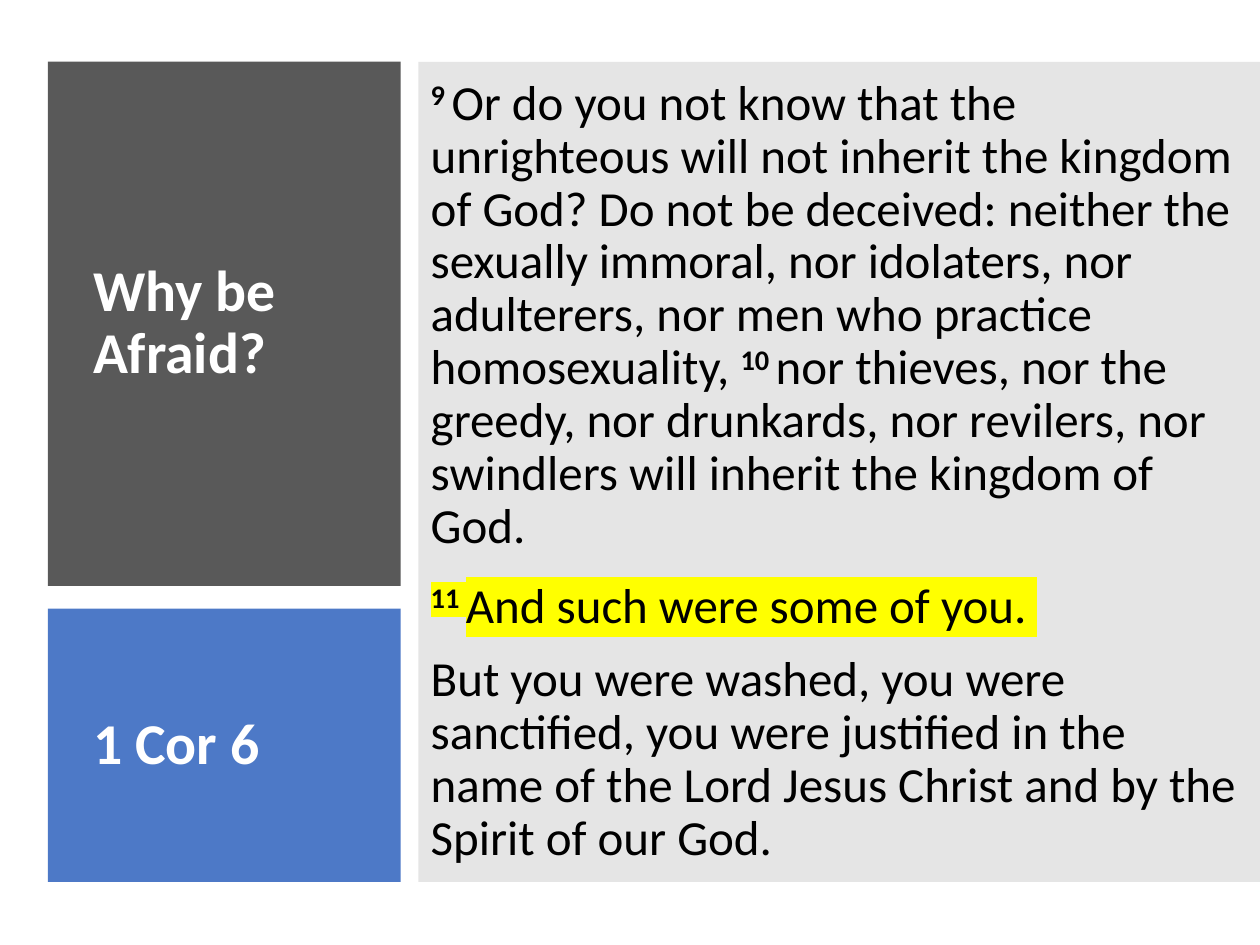
from lxml import etree
from pptx import Presentation
from pptx.dml.color import RGBColor
from pptx.enum.shapes import MSO_SHAPE
from pptx.enum.text import MSO_ANCHOR, PP_ALIGN
from pptx.oxml.ns import qn
from pptx.util import Inches, Pt

FONT = "Calibri"
WHITE, BLACK, YELLOW = "FFFFFF", "000000", "FFFF00"
DARK, BLUE, PALE = "595959", "4472C4", "E5E5E5"

# Each verse: space after in points, highlight, then (text, is verse number) spans
VERSES = [
    (15.4, None, [
        ("9 ", True),
        ("Or do you not know that the unrighteous will not inherit the kingdom of God? "
         "Do not be deceived: neither the sexually immoral, nor idolaters, nor adulterers, "
         "nor men who practice homosexuality, ", False),
        ("10 ", True),
        ("nor thieves, nor the greedy, nor drunkards, nor revilers, nor swindlers "
         "will inherit the kingdom of God. ", False),
    ]),
    (11.5, YELLOW, [("11 ", True), ("And such were some of you. ", False)]),
    (0, None, [
        ("But you were washed, you were sanctified, you were justified in the name "
         "of the Lord Jesus Christ and by the Spirit of our God.", False),
    ]),
]


def color(hex_string):
    return RGBColor.from_string(hex_string)


class SlideBuilder:
    def __init__(self, page):
        self.page = page

    def panel(self, left, top, width, height, fill, opacity=100):
        box = self.page.shapes.add_shape(
            MSO_SHAPE.RECTANGLE, Inches(left), Inches(top), Inches(width), Inches(height))
        box.shadow.inherit = False
        box.line.fill.background()
        box.fill.solid()
        box.fill.fore_color.rgb = color(fill)
        if opacity < 100:
            tint = box.fill._xPr.find(qn("a:solidFill"))[0]
            etree.SubElement(tint, qn("a:alpha"), val=str(opacity * 1000))
        return box

    def style(self, span, size, ink, bold):
        span.font.name = FONT
        span.font.size = Pt(size)
        span.font.bold = bold
        span.font.color.rgb = color(ink)

    def heading(self, left, top, width, height, text):
        box = self.page.shapes.add_textbox(
            Inches(left), Inches(top), Inches(width), Inches(height))
        frame = box.text_frame
        frame.word_wrap = True
        frame.vertical_anchor = MSO_ANCHOR.MIDDLE
        frame.text = text
        para = frame.paragraphs[0]
        para.line_spacing = 0.9
        para.space_after = Pt(6)
        self.style(para.runs[0], 33, WHITE, True)

    def highlight(self, span, fill):
        """Mark the span; the schema wants the mark right after the text fill."""
        mark = etree.Element(qn("a:highlight"))
        etree.SubElement(mark, qn("a:srgbClr"), val=fill)
        span.font._element.find(qn("a:solidFill")).addnext(mark)

    def passage(self, box, verses):
        frame = box.text_frame
        frame.word_wrap = True
        frame.vertical_anchor = MSO_ANCHOR.MIDDLE
        for index, (gap, mark, spans) in enumerate(verses):
            para = frame.add_paragraph() if index else frame.paragraphs[0]
            para.alignment = PP_ALIGN.LEFT
            para.line_spacing = 0.9
            para.space_after = Pt(gap)
            for text, is_number in spans:
                span = para.add_run()
                span.text = text
                self.style(span, 28, BLACK, is_number)
                if is_number:
                    span.font._element.set("baseline", "30000")
                if mark:
                    self.highlight(span, mark)


def main():
    deck = Presentation()
    deck.slide_width, deck.slide_height = Inches(10), Inches(7.5)
    builder = SlideBuilder(deck.slides.add_slide(deck.slide_layouts[6]))

    builder.panel(0.38, 0.49, 2.8, 4.16, DARK)
    builder.heading(0.64, 0.8, 2.33, 3.54, "Why be Afraid?")
    builder.panel(0.38, 4.83, 2.8, 2.17, BLUE, opacity=95)
    builder.passage(builder.panel(3.32, 0.49, 6.68, 6.51, PALE), VERSES)
    builder.heading(0.64, 5.09, 2.33, 1.65, "1 Cor 6")

    deck.save("out.pptx")


if __name__ == "__main__":
    main()
